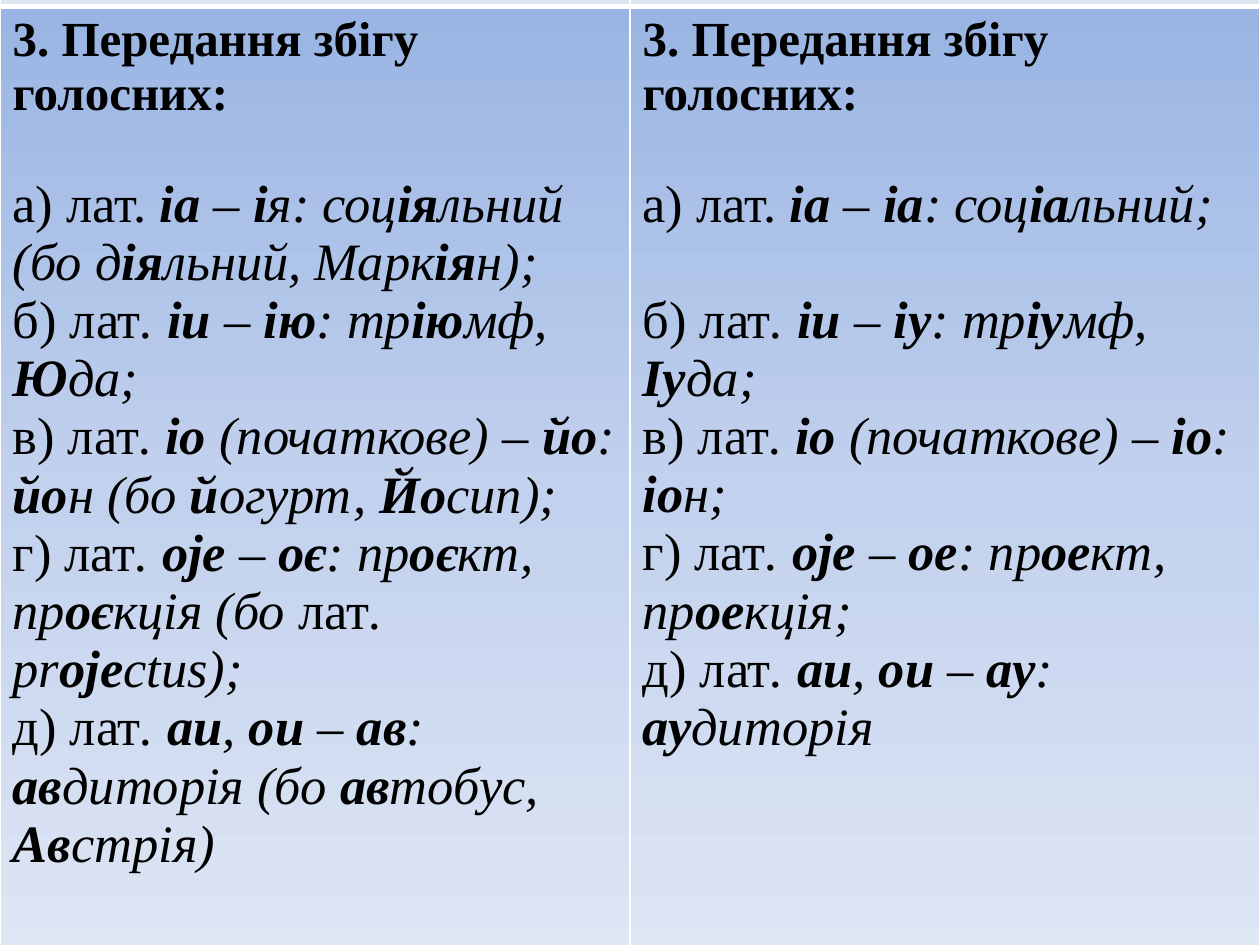
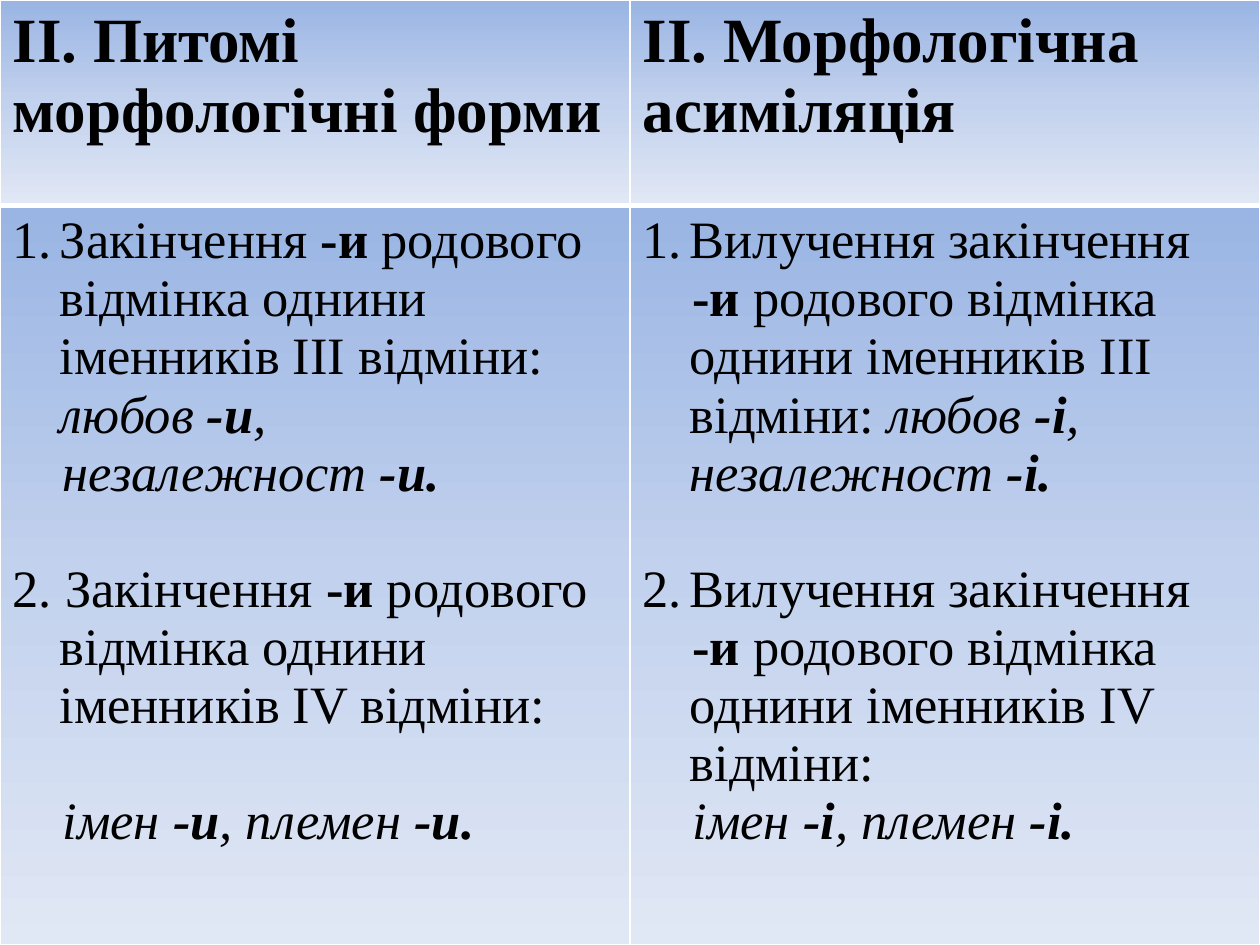
"""Build two slides that compare spelling and grammar forms in two-column tables."""
from lxml import etree
from pptx import Presentation
from pptx.dml.color import RGBColor
from pptx.enum.text import MSO_ANCHOR
from pptx.oxml.ns import qn
from pptx.util import Pt

TOP = MSO_ANCHOR.TOP
FONT = "Times New Roman"
BLACK = RGBColor(0x00, 0x00, 0x00)
WHITE = RGBColor(0xFF, 0xFF, 0xFF)
PALE = RGBColor(0xDC, 0xE6, 0xF2)
SHADES = (
    (0, RGBColor(0x9A, 0xB5, 0xE4)),
    (50, RGBColor(0xC2, 0xD1, 0xED)),
    (100, RGBColor(0xE1, 0xE8, 0xF5)),
)
WIDE, HIGH = 720, 540
HANG = 27
STEP = 1.5
LINE = 33

VOWELS = (28, 0, 0, 0, "*3. Передання збігу голосних:*")
SOUNDS = [
    [
        VOWELS,
        (30, 31, 0, 0, "а) лат. _*іа* – *і*я: соц*ія*льний (бо д*ія*льний, Марк*ія*н);_"),
        (30, 0, 0, 0, "б) лат_. *іи* – *ію*: тр*ію*мф, *Ю*да;_"),
        (30, 0, 0, 0, "в) лат_. *іо *(початкове) – *йо*: *йо*н (бо *й*огурт, *Йо*сип);_"),
        (30, 0, 0, 0, "г) лат_. *оje* – *оє*: пр*оє*кт, пр*оє*кція (бо _лат_. pr*oje*ctus);_"),
        (30, 0, 0, 0, "д) лат_. *аu*, *ou* – *ав*: *ав*диторія (бо *ав*тобус, *Ав*стрія)_"),
    ],
    [
        VOWELS,
        (30, 31, 0, 0, "а) лат. _*іа* – *іа*: соц*іа*льний;_"),
        (30, LINE, 0, 0, "б) лат_. *іи* – *іу*: тр*іу*мф, *Іу*да;_"),
        (30, 0, 0, 0, "в) лат_. *іо* (початкове) – *іо*: *іо*н;_"),
        (30, 0, 0, 0, "г) лат_. *оje *– *ое*: пр*ое*кт, пр*ое*кція;_"),
        (30, 0, 0, 0, "д) лат_. *аu*, *ou* – *ау*: *ау*диторія_"),
    ],
]
HEADS = [
    [(36, 0, 0, 0, "*ІІ. Питомі морфологічні форми*")],
    [(36, 0, 0, 0, "*ІІ. Морфологічна асиміляція*")],
]
FORMS = [
    [
        (30, 0, -HANG, 1, "Закінчення *-и *родового відмінка однини іменників ІІІ відміни: _любов *-и*,_"),
        (30, 0, STEP, 0, "_незалежност *-и.*_"),
        (30, LINE, -HANG, 0, "2. Закінчення *-и *родового відмінка однини іменників IV відміни:"),
        (30, LINE, STEP, 0, "_імен *-и*, племен *-и.*_"),
    ],
    [
        (30, 0, -HANG, 1, "Вилучення закінчення"),
        (30, 0, STEP, 0, "*-и *родового відмінка однини іменників ІІІ відміни: _любов *-і*, незалежност *-і.*_"),
        (30, LINE, -HANG, 2, "Вилучення закінчення"),
        (30, 0, STEP, 0, "*-и *родового відмінка однини іменників IV відміни:"),
        (30, 0, STEP, 0, "_імен *-і*, племен *-і.*_"),
    ],
]
PAGES = [
    (-30.2, (33.8, 561.6), ([[], []], SOUNDS)),
    (0, (117.4, 422.6), (HEADS, FORMS)),
]


def paint(cell, row, plain):
    """Give a cell its white borders and its plain or shaded fill."""
    prop = cell._tc.get_or_add_tcPr()
    thick = "lnT" if row else "lnB"
    for side in ("lnL", "lnR", "lnT", "lnB"):
        line = etree.SubElement(prop, qn("a:" + side), w=str(Pt(3 if side == thick else 1)))
        solid = etree.SubElement(line, qn("a:solidFill"))
        etree.SubElement(solid, qn("a:srgbClr"), val=str(WHITE))
    if plain:
        cell.fill.solid()
        cell.fill.fore_color.rgb = PALE
        return
    grad = etree.SubElement(prop, qn("a:gradFill"), rotWithShape="1")
    stops = etree.SubElement(grad, qn("a:gsLst"))
    for pos, shade in SHADES:
        stop = etree.SubElement(stops, qn("a:gs"), pos=str(pos * 1000))
        etree.SubElement(stop, qn("a:srgbClr"), val=str(shade))
    etree.SubElement(grad, qn("a:lin"), ang="5400000", scaled="0")


def write(frame, items):
    """Write paragraphs, with * around bold and _ around italic text."""
    for i, (size, gap, indent, num, text) in enumerate(items):
        para = frame.add_paragraph() if i else frame.paragraphs[0]
        para.space_before = Pt(gap)
        prop = para._p.get_or_add_pPr()
        if indent:
            prop.set("marL", str(Pt(HANG)))
            prop.set("indent", str(Pt(indent)))
        if num:
            etree.SubElement(prop, qn("a:buAutoNum"), type="arabicPeriod", startAt=str(num))
        for j, chunk in enumerate(text.split("_")):
            for k, piece in enumerate(chunk.split("*")):
                if piece:
                    run = para.add_run()
                    run.text = piece
                    run.font.name = FONT
                    run.font.size = Pt(size)
                    run.font.color.rgb = BLACK
                    run.font.italic = j % 2 == 1
                    run.font.bold = k % 2 == 1


deck = Presentation()
deck.slide_width, deck.slide_height = Pt(WIDE), Pt(HIGH)
for top, sizes, rows in PAGES:
    slide = deck.slides.add_slide(deck.slide_layouts[6])
    table = slide.shapes.add_table(2, 2, 0, Pt(top), Pt(WIDE), Pt(sum(sizes))).table
    table.horz_banding = False
    for r, cells in enumerate(rows):
        table.rows[r].height = Pt(sizes[r])
        for c, items in enumerate(cells):
            cell = table.cell(r, c)
            cell.vertical_anchor = TOP
            paint(cell, r, not items)
            write(cell.text_frame, items)
deck.save("out.pptx")
